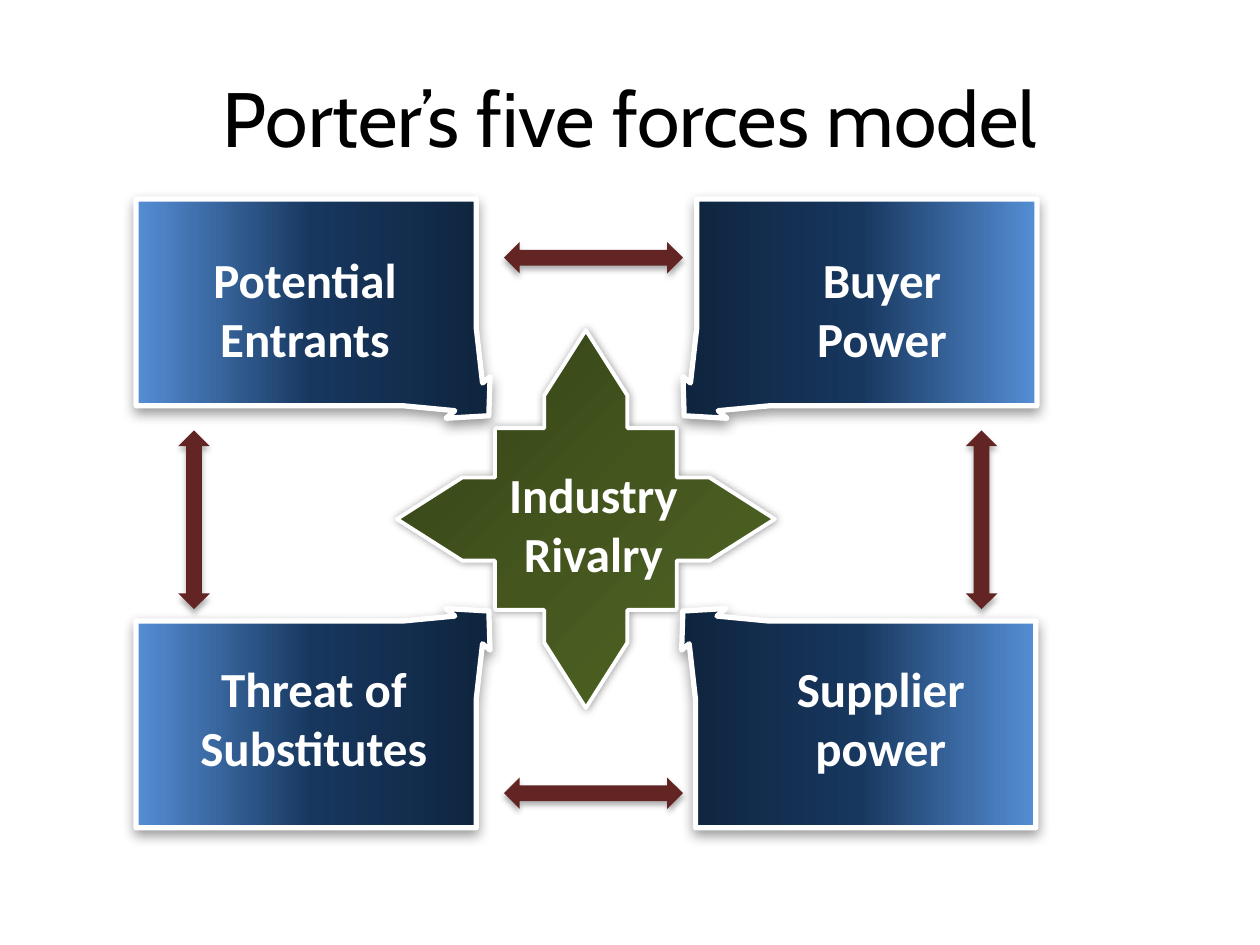
from typing import NamedTuple

from lxml.etree import SubElement
from pptx import Presentation
from pptx.dml.color import RGBColor
from pptx.enum.shapes import MSO_SHAPE as Preset
from pptx.enum.text import MSO_ANCHOR as Anchor, MSO_AUTO_SIZE as AutoSize, PP_ALIGN as Align
from pptx.oxml.ns import qn
from pptx.util import Inches, Pt

COLUMNS, ROWS = 100, 75
WHITE, MAROON = "FFFFFF", "632523"
NAVY_STOPS = ("0F243E", "17375E", "558ED5")
GREEN_STOPS = ("303D15", "44561E", "516624")


class Area(NamedTuple):
    column: float
    row: float
    columns: float
    rows: float


class Shadow(NamedTuple):
    opacity: int
    blur: float
    distance: float
    angle: int


class Panel(NamedTuple):
    mirror_column: float
    mirror_row: float
    gradient_angle: int


class Label(NamedTuple):
    text: str
    area: Area


class Arrow(NamedTuple):
    area: Area
    rotation: int


PANEL_SHADOW = Shadow(40, 7, 3, 90)
STAR_SHADOW = Shadow(40, 5, 0, 0)
ARROW_SHADOW = Shadow(32, 3.5, 2.2, 90)
STAR = Area(31.5, 26.2, 30, 30)
STAR_ADJUSTMENTS = (0.22, 0.11, 0.173, 0.481)
PANEL_OUTLINE = (
    (38.3, 30.4), (37.8, 26), (37.8, 15.8), (10.8, 15.8), (10.8, 32.2), (31.9, 32.2),
    (36.1, 32.6), (35.4, 33.2), (38.8, 33), (38.9, 29.9),
)
PANELS = (
    Panel(0, 0, 180),
    Panel(0, 81.5, 180),
    Panel(93, 81.5, 0),
    Panel(93.1, 0, 0),
)
LABELS = (
    Label("Buyer Power", Area(60, 19.3, 20, 10.4)),
    Label("Supplier power", Area(59.9, 51.8, 20, 10.4)),
    Label("Threat of Substitutes", Area(14.5, 51.8, 20.8, 10.4)),
    Label("Potential Entrants", Area(12.1, 19.3, 24.2, 10.4)),
    Label("Industry Rivalry", Area(37.1, 36.4, 20, 10.4)),
)
ARROWS = (
    Arrow(Area(40, 19.2, 14.2, 2.5), 0),
    Arrow(Area(40, 61.7, 14.2, 2.5), 0),
    Arrow(Area(8.3, 40, 14.2, 2.5), 270),
    Arrow(Area(70.8, 40, 14.2, 2.5), 270),
)


def cells(count: float) -> int:
    return Inches(count / 10)


def place(area: Area) -> list[int]:
    return [cells(value) for value in area]


def colour(value: str) -> RGBColor:
    return RGBColor.from_string(value)


def add_shadow(shape, shadow: Shadow) -> None:
    shape.shadow.inherit = False
    effects = shape._element.spPr.find(qn("a:effectLst"))
    outer = SubElement(
        effects, qn("a:outerShdw"), blurRad=str(Pt(shadow.blur)), dist=str(Pt(shadow.distance)),
        dir=str(shadow.angle * 60000), algn="ctr", rotWithShape="0",
    )
    black = SubElement(outer, qn("a:srgbClr"), val="000000")
    SubElement(black, qn("a:alpha"), val=str(shadow.opacity * 1000))


def fill_gradient(shape, stops: tuple[str, ...], angle: int) -> None:
    shape.fill.gradient()
    shape.fill.gradient_angle = angle
    stop_list = shape._element.spPr.find(".//" + qn("a:gsLst"))
    stop_list.clear()
    for index, value in enumerate(stops):
        position = index * 100000 // (len(stops) - 1)
        stop = SubElement(stop_list, qn("a:gs"), pos=str(position))
        SubElement(stop, qn("a:srgbClr"), val=value)


def outline(shape, width: float) -> None:
    shape.line.color.rgb = colour(WHITE)
    shape.line.width = Pt(width)


def write(shape, text: str, font: str, size: int, value: str, bold: bool) -> None:
    frame = shape.text_frame
    frame.word_wrap = True
    frame.text = text
    para = frame.paragraphs[0]
    para.alignment = Align.CENTER
    for span in para.runs:
        span.font.name = font
        span.font.size = Pt(size)
        span.font.bold = bold
        span.font.color.rgb = colour(value)


def add_title(slide, text: str) -> None:
    title = slide.shapes.title
    title.left, title.top, title.width, title.height = place(Area(5, 3, 90, 12.5))
    write(title, text, "Cabin", 44, "000000", False)
    title.text_frame.vertical_anchor = Anchor.MIDDLE


def add_star(slide) -> None:
    star = slide.shapes.add_shape(Preset.QUAD_ARROW_CALLOUT, *place(STAR))
    for index, value in enumerate(STAR_ADJUSTMENTS):
        star.adjustments[index] = value
    fill_gradient(star, GREEN_STOPS, 315)
    outline(star, 2.25)
    add_shadow(star, STAR_SHADOW)


def add_panel(slide, panel: Panel) -> None:
    points = [
        (cells(abs(panel.mirror_column - column)), cells(abs(panel.mirror_row - row)))
        for column, row in PANEL_OUTLINE
    ]
    builder = slide.shapes.build_freeform(*points[0])
    builder.add_line_segments(points[1:], close=True)
    shape = builder.convert_to_shape()
    fill_gradient(shape, NAVY_STOPS, panel.gradient_angle)
    outline(shape, 3)
    add_shadow(shape, PANEL_SHADOW)


def add_label(slide, label: Label) -> None:
    box = slide.shapes.add_textbox(*place(label.area))
    write(box, label.text, "Calibri", 28, WHITE, True)
    box.text_frame.auto_size = AutoSize.SHAPE_TO_FIT_TEXT


def add_arrow(slide, arrow: Arrow) -> None:
    shape = slide.shapes.add_shape(Preset.LEFT_RIGHT_ARROW, *place(arrow.area))
    shape.rotation = arrow.rotation
    shape.fill.solid()
    shape.fill.fore_color.rgb = colour(MAROON)
    shape.line.fill.background()
    add_shadow(shape, ARROW_SHADOW)


def main() -> None:
    deck = Presentation()
    deck.slide_width, deck.slide_height = cells(COLUMNS), cells(ROWS)
    page = deck.slides.add_slide(deck.slide_layouts[5])
    add_title(page, "Porter’s five forces model")
    add_star(page)
    for panel in PANELS:
        add_panel(page, panel)
    for arrow in ARROWS:
        add_arrow(page, arrow)
    for label in LABELS:
        add_label(page, label)
    deck.save("out.pptx")


if __name__ == "__main__":
    main()
